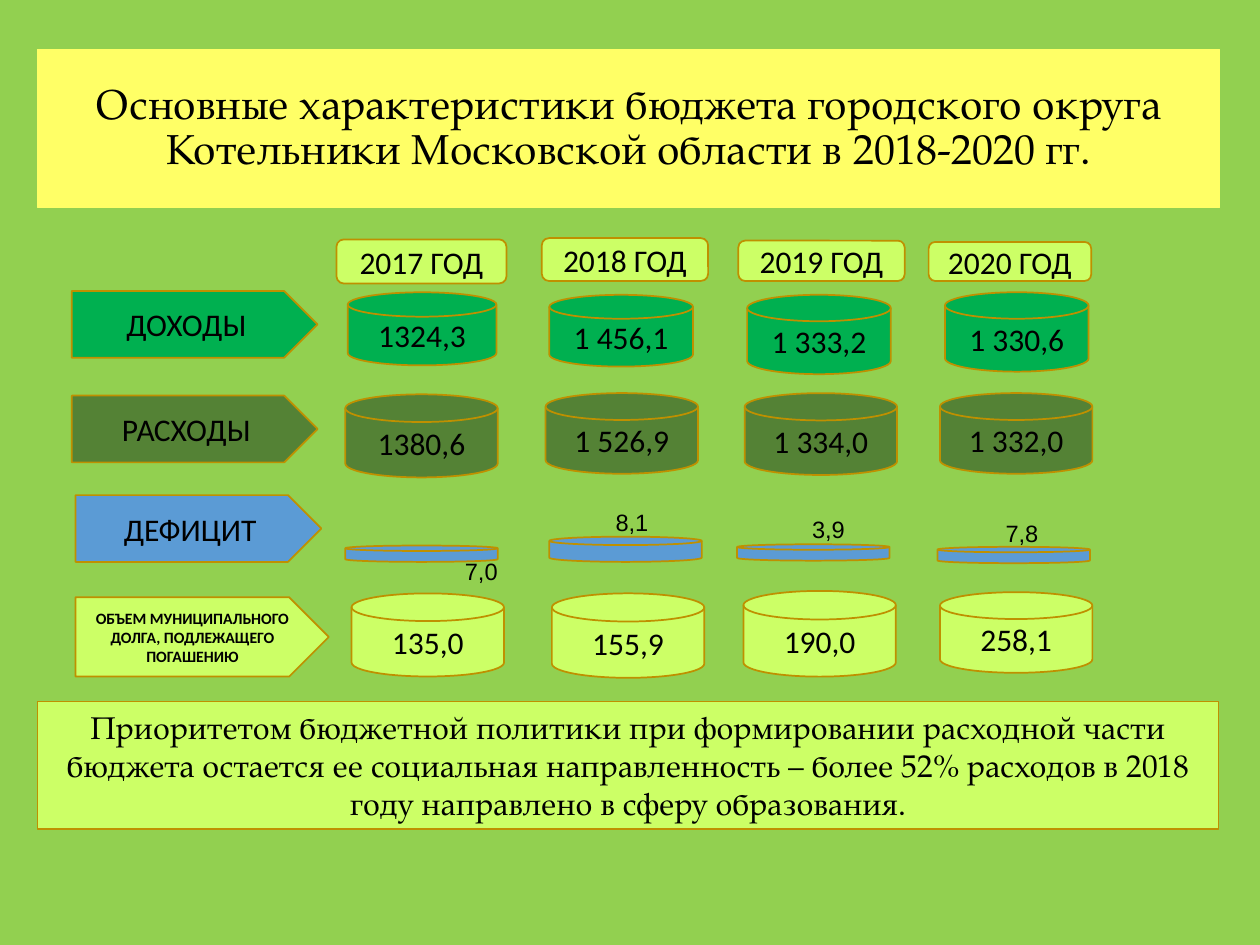
from dataclasses import dataclass

from pptx import Presentation
from pptx import util as u
from pptx.dml.color import RGBColor
from pptx.enum import shapes, text


@dataclass(frozen=True)
class Theme:
    page: str = "92D050"
    title: str = "FFFF66"
    lime: str = "CCFF66"
    green: str = "00B050"
    olive: str = "548235"
    blue: str = "5B9BD5"
    outline: str = "BF9000"
    ink: str = "000000"
    serif: str = "TeX Gyre Pagella"
    body: str = "Calibri"
    label: str = "Arial"
    title_size: float = 24
    text_size: float = 18
    label_size: float = 13.5
    small_size: float = 9


THEME = Theme()
SHAPE = shapes.MSO_SHAPE

TITLE = ("Основные характеристики бюджета городского округа "
         "Котельники Московской области в 2018-2020 гг.")
PRIORITY = ("Приоритетом бюджетной политики при формировании расходной части "
            "бюджета остается ее социальная направленность – более 52% расходов "
            "в 2018 году направлено в сферу образования.")

YEARS = [
    ("2017 ГОД", (2.67, 1.9, 1.35, 0.35)),
    ("2018 ГОД", (4.3, 1.89, 1.32, 0.34)),
    ("2019 ГОД", (5.86, 1.91, 1.32, 0.32)),
    ("2020 ГОД", (7.37, 1.92, 1.29, 0.31)),
]

DISK_WIDTH = 1.21
ROWS = [
    ("ДОХОДЫ", THEME.green, (0.57, 2.31, 1.95, 0.53), [
        ("1324,3", (2.76, 2.32, 1.18, 0.58)),
        ("1 456,1", (4.36, 2.34, 1.14, 0.57)),
        ("1 333,2", (5.93, 2.34, 1.14, 0.63)),
        ("1 330,6", (7.5, 2.32, 1.14, 0.63)),
    ]),
    ("РАСХОДЫ", THEME.olive, (0.57, 3.14, 1.95, 0.53), [
        ("1380,6", (2.74, 3.13, DISK_WIDTH, 0.66)),
        ("1 526,9", (4.33, 3.12, DISK_WIDTH, 0.64)),
        ("1 334,0", (5.91, 3.12, DISK_WIDTH, 0.65)),
        ("1 332,0", (7.46, 3.12, DISK_WIDTH, 0.64)),
    ]),
    ("ДЕФИЦИТ", THEME.blue, (0.6, 3.93, 1.95, 0.53), [
        ("", (2.74, 4.33, DISK_WIDTH, 0.13)),
        ("", (4.36, 4.26, DISK_WIDTH, 0.2)),
        ("", (5.85, 4.32, DISK_WIDTH, 0.13)),
        ("", (7.44, 4.34, DISK_WIDTH, 0.13)),
    ]),
    ("ОБЪЕМ МУНИЦИПАЛЬНОГО ДОЛГА, ПОДЛЕЖАЩЕГО ПОГАШЕНИЮ", THEME.lime,
     (0.6, 4.74, 2.01, 0.63), [
        ("135,0", (2.79, 4.71, DISK_WIDTH, 0.66)),
        ("155,9", (4.38, 4.71, DISK_WIDTH, 0.67)),
        ("190,0", (5.9, 4.69, DISK_WIDTH, 0.68)),
        ("258,1", (7.46, 4.7, DISK_WIDTH, 0.64)),
    ]),
]

DEFICITS = [
    ("7,0", (3.58, 4.37, 0.48, 0.33)),
    ("8,1", (4.72, 3.98, 0.59, 0.33)),
    ("3,9", (6.28, 4.04, 0.59, 0.33)),
    ("7,8", (7.85, 4.07, 0.52, 0.33)),
]


def inches(place):
    return [u.Inches(value) for value in place]


def color(value):
    return RGBColor.from_string(value)


def paint(shape, fill, line, width=1):
    shape.fill.solid()
    shape.fill.fore_color.rgb = color(fill)
    shape.line.color.rgb = color(line)
    shape.line.width = u.Pt(width)


def write(shape, words, font, size, anchor=text.MSO_ANCHOR.MIDDLE, bold=False):
    frame = shape.text_frame
    frame.word_wrap = True
    frame.auto_size = text.MSO_AUTO_SIZE.NONE
    frame.vertical_anchor = anchor
    para = frame.paragraphs[0]
    para.text = words
    para.alignment = text.PP_ALIGN.CENTER
    para.font.name = font
    para.font.size = u.Pt(size)
    para.font.bold = bold
    para.font.color.rgb = color(THEME.ink)
    return para


def add_block(page, kind, place, fill, width=1):
    block = page.shapes.add_shape(kind, *inches(place))
    block.shadow.inherit = False
    paint(block, fill, THEME.outline, width)
    return block


def add_title(page):
    title = page.shapes.title
    title.left, title.top, title.width, title.height = inches((0.3, 0.39, 9.38, 1.26))
    paint(title, THEME.title, THEME.title, 0.5)
    para = write(title, TITLE, THEME.serif, THEME.title_size)
    para.line_spacing = 0.9


def add_row(page, name, fill, place, disks):
    plate = add_block(page, SHAPE.PENTAGON, place, fill)
    is_long = len(name) > 10
    size = THEME.small_size if is_long else THEME.text_size
    write(plate, name, THEME.body, size, bold=is_long)
    for value, disk_place in disks:
        disk = add_block(page, SHAPE.FLOWCHART_MAGNETIC_DISK, disk_place, fill)
        if value:
            write(disk, value, THEME.body, THEME.text_size)


def main():
    deck = Presentation()
    deck.slide_width, deck.slide_height = inches((10, 7.5))
    page = deck.slides.add_slide(deck.slide_layouts[5])
    page.background.fill.solid()
    page.background.fill.fore_color.rgb = color(THEME.page)

    add_title(page)
    for year, place in YEARS:
        header = add_block(page, SHAPE.ROUNDED_RECTANGLE, place, THEME.lime)
        write(header, year, THEME.body, THEME.text_size)
    for row in ROWS:
        add_row(page, *row)
    for value, place in DEFICITS:
        label = page.shapes.add_textbox(*inches(place))
        write(label, value, THEME.label, THEME.label_size, text.MSO_ANCHOR.TOP)

    note = add_block(page, SHAPE.RECTANGLE, (0.3, 5.57, 9.37, 1.01), THEME.lime, 0.75)
    write(note, PRIORITY, THEME.serif, THEME.text_size, text.MSO_ANCHOR.TOP)

    deck.save("out.pptx")


if __name__ == "__main__":
    main()
